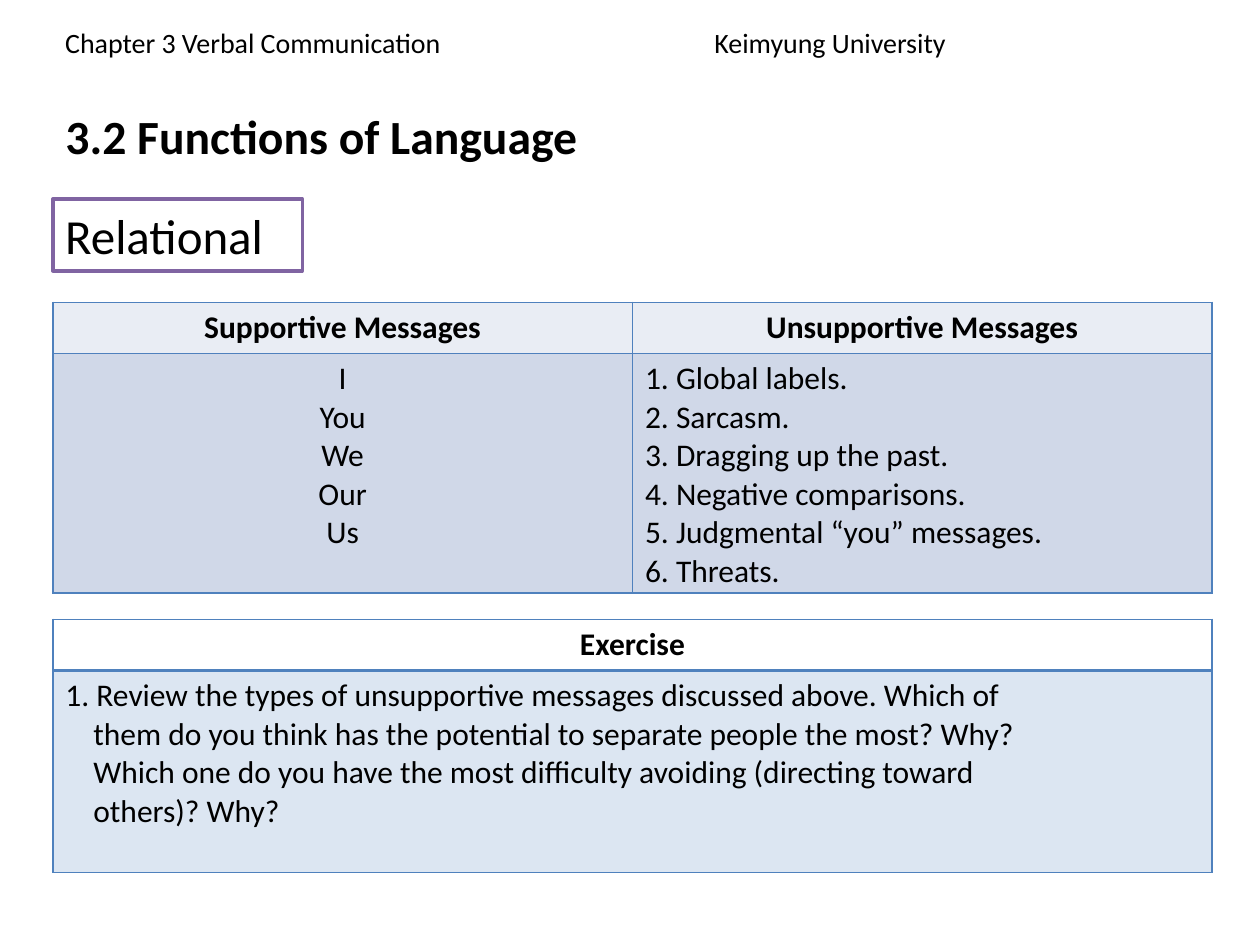
from lxml.etree import SubElement
from pptx import Presentation
from pptx.dml.color import RGBColor
from pptx.enum.shapes import MSO_SHAPE as Shape
from pptx.enum.text import MSO_ANCHOR as Anchor, PP_ALIGN as Align
from pptx.oxml.ns import qn
from pptx.util import Pt

BLUE = "4F81BD"
LEFT, WIDTH = 30.2, 662.4


def color(hex_string):
    return RGBColor.from_string(hex_string)


def write(frame, text, size=18, bold=False, align=Align.LEFT, anchor=Anchor.TOP):
    frame.word_wrap = True
    frame.vertical_anchor = anchor
    frame.text = text
    for paragraph in frame.paragraphs:
        paragraph.alignment = align
        font = paragraph.font
        font.name, font.size, font.bold = "Calibri", Pt(size), bold
        font.color.rgb = color("000000")


prs = Presentation()
prs.slide_width, prs.slide_height = Pt(720), Pt(540)
slide = prs.slides.add_slide(prs.slide_layouts[5])
shapes = slide.shapes

running_head = shapes.add_textbox(Pt(LEFT), Pt(11), Pt(WIDTH), Pt(51)).text_frame
write(running_head, "Chapter 3 Verbal Communication\tKeimyung University", size=16)
tab_stops = SubElement(running_head.paragraphs[0]._p.get_or_add_pPr(), qn("a:tabLst"))
running_head.paragraphs[0]._p.pPr.insert(0, tab_stops)
SubElement(tab_stops, qn("a:tab"), pos=str(Pt(371)), algn="l")

title = shapes.title
title.left, title.top, title.width, title.height = Pt(LEFT), Pt(60.5), Pt(612), Pt(34)
write(title.text_frame, "3.2 Functions of Language", size=27.2, bold=True, anchor=Anchor.MIDDLE)

relational = shapes.add_shape(Shape.RECTANGLE, Pt(LEFT), Pt(113.8), Pt(142.6), Pt(41))
relational.shadow.inherit = False
relational.fill.solid()
relational.fill.fore_color.rgb = color("FFFFFF")
relational.line.color.rgb = color("8064A2")
relational.line.width = Pt(2)
write(relational.text_frame, "Relational", size=28)

supportive = "I\nYou\nWe\nOur\nUs"
unsupportive = (
    "1. Global labels.\n2. Sarcasm.\n3. Dragging up the past.\n"
    "4. Negative comparisons.\n5. Judgmental “you” messages.\n6. Threats."
)
question = (
    "1. Review the types of unsupportive messages discussed above. Which of "
    "them do you think has the potential to separate people the most? Why? "
    "Which one do you have the most difficulty avoiding (directing toward "
    "others)? Why?"
)
sections = [
    (172.8, 137, 1, ["E9EDF4", "D0D8E8"],
     [["Supportive Messages", "Unsupportive Messages"], [supportive, unsupportive]]),
    (354, 115.4, 2, [None, "DCE6F2"], [["Exercise"], [question]]),
]

for top, body_height, rule_width, fills, rows in sections:
    heights = [29.2, body_height]
    table = shapes.add_table(
        2, len(rows[0]), Pt(LEFT), Pt(top), Pt(WIDTH), Pt(sum(heights))
    ).table
    table.horz_banding = False
    for r, (row, height, fill) in enumerate(zip(rows, heights, fills)):
        table.rows[r].height = Pt(height)
        for c, text in enumerate(row):
            cell = table.cell(r, c)
            centred = r == 0 or text == supportive
            write(cell.text_frame, text, bold=r == 0,
                  align=Align.CENTER if centred else Align.LEFT)
            if r == 1:
                cell.margin_bottom = Pt(0)
            borders = cell._tc.get_or_add_tcPr()
            for side in ("lnL", "lnR", "lnT", "lnB"):
                inner_rule = (r, side) in [(0, "lnB"), (1, "lnT")]
                line = SubElement(borders, qn(f"a:{side}"),
                                  w=str(Pt(rule_width if inner_rule else 1)))
                SubElement(SubElement(line, qn("a:solidFill")), qn("a:srgbClr"), val=BLUE)
            if fill:
                cell.fill.solid()
                cell.fill.fore_color.rgb = color(fill)
            else:
                cell.fill.background()

question_cell = table.cell(1, 0)
question_cell.margin_right = Pt(100)
hanging = question_cell.text_frame.paragraphs[0]._p.get_or_add_pPr()
hanging.set("marL", str(Pt(16)))
hanging.set("indent", str(Pt(-16)))

prs.save("out.pptx")
